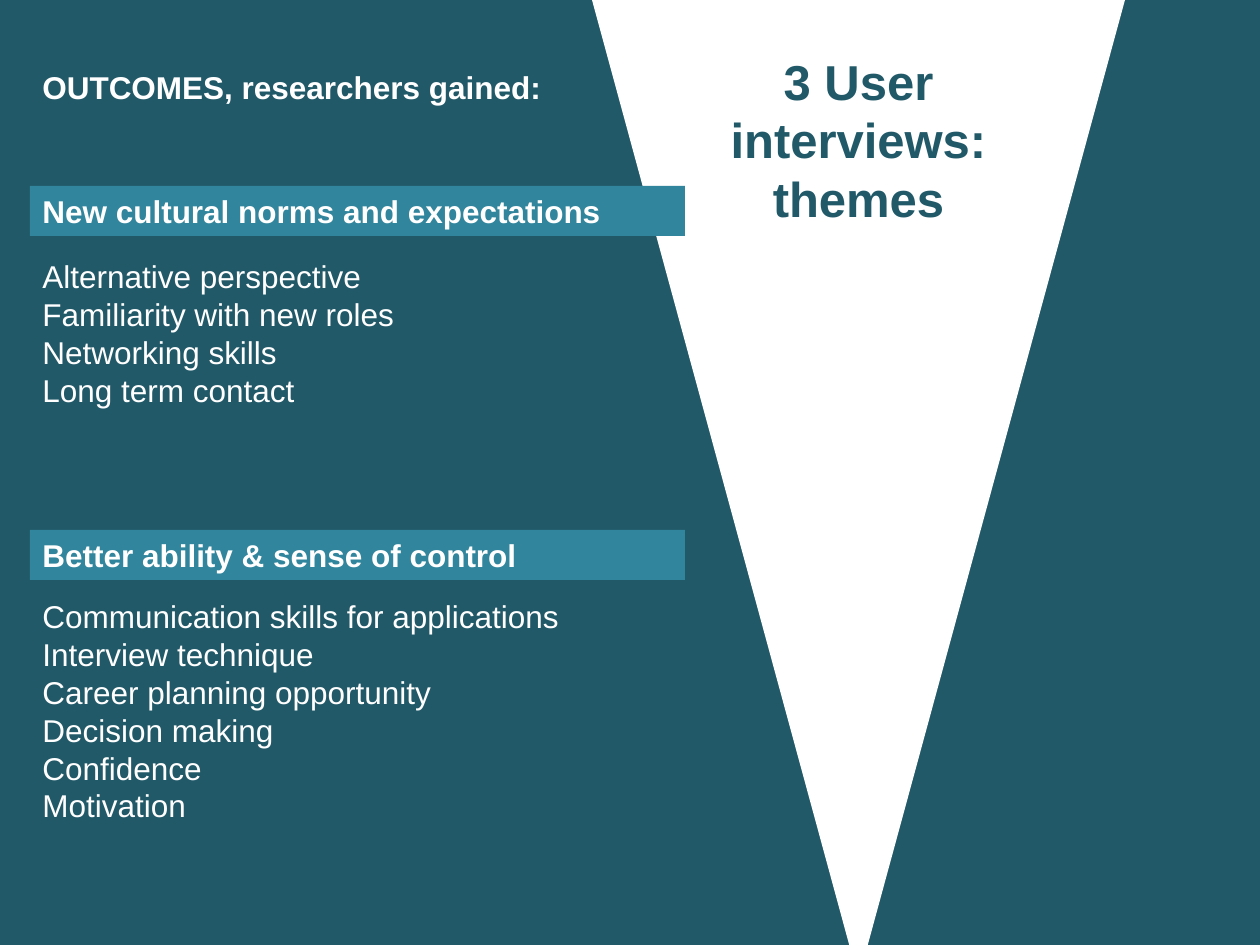
"""Build the slide on outcomes from user interviews."""
import pptx
import pptx.dml.color
import pptx.enum.shapes
import pptx.enum.text
import pptx.util

PX = 914400 // 126
COLORS = {"deep": "215968", "teal": "31859C", "white": "FFFFFF"}
SHAPES = pptx.enum.shapes.MSO_SHAPE
ALIGN = pptx.enum.text.PP_ALIGN
LINE = 21.6
SKILLS = ["Alternative perspective", "Familiarity with new roles",
          "Networking skills", "Long term contact"]
GAINS = ["Communication skills for applications", "Interview technique",
         "Career planning opportunity", "Decision making", "Confidence",
         "Motivation"]


def color(name):
    return pptx.dml.color.RGBColor.from_string(COLORS[name])


def scale(box):
    return [n * PX for n in box]


def style(para, size=18, ink="white", bold=False, align=ALIGN.LEFT):
    para.alignment = align
    for run in para.runs:
        font = run.font
        font.name, font.size, font.bold = "Arial", pptx.util.Pt(size), bold
        font.color.rgb = color(ink)


def fit(frame):
    frame.word_wrap = True
    frame.auto_size = pptx.enum.text.MSO_AUTO_SIZE.SHAPE_TO_FIT_TEXT


def add_shape(slide, kind, box, fill):
    shape = slide.shapes.add_shape(kind, *scale(box))
    shape.shadow.inherit = False
    shape.fill.solid()
    shape.fill.fore_color.rgb = color(fill)
    shape.line.fill.background()
    return shape


def add_bar(slide, top, text):
    frame = add_shape(slide, SHAPES.RECTANGLE, (30, top, 655, 50), "teal").text_frame
    fit(frame)
    frame.text = text
    style(frame.paragraphs[0], bold=True)


def add_text(slide, box, lines):
    frame = slide.shapes.add_textbox(*scale(box)).text_frame
    fit(frame)
    frame.text = "\n".join(lines)
    return frame.paragraphs


def add_list(slide):
    paras = add_text(slide, (30, 62, 630, 776),
                     ["OUTCOMES, researchers gained:", *SKILLS, *GAINS])
    for i, para in enumerate(paras):
        style(para, bold=i == 0)
    paras[1].space_before = pptx.util.Pt(4 * LINE)
    paras[1 + len(SKILLS)].space_before = pptx.util.Pt(5 * LINE)


def main():
    deck = pptx.Presentation()
    deck.slide_width, deck.slide_height = scale((1260, 945))
    slide = deck.slides.add_slide(deck.slide_layouts[6])
    back = slide.background.fill
    back.solid()
    back.fore_color.rgb = color("deep")
    wedge = add_shape(slide, SHAPES.ISOSCELES_TRIANGLE, (592, 0, 533, 979), "white")
    wedge.rotation = 180
    title = add_text(slide, (688, 45, 341, 190), ["3 User interviews: themes"])
    style(title[0], 28, "deep", True, ALIGN.CENTER)
    add_list(slide)
    add_bar(slide, 186, "New cultural norms and expectations")
    add_bar(slide, 530, "Better ability & sense of control")
    deck.save("out.pptx")


if __name__ == "__main__":
    main()
